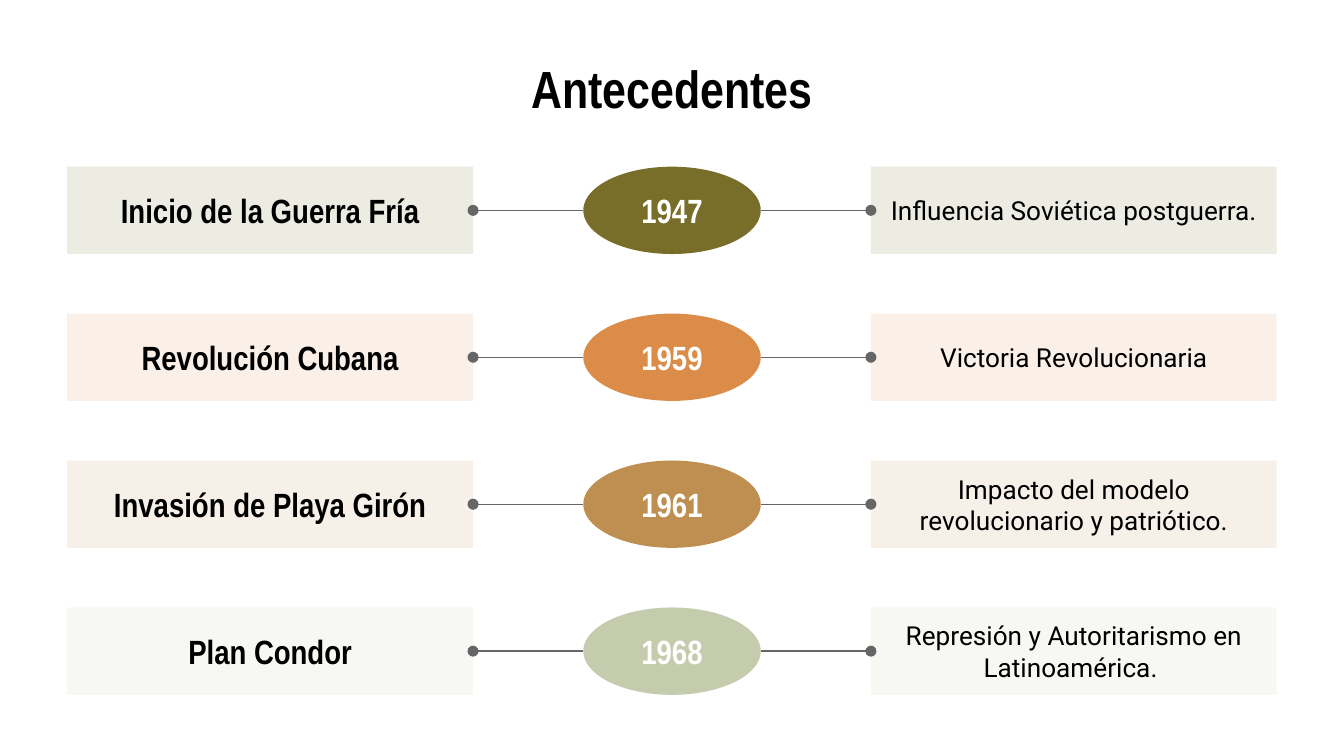
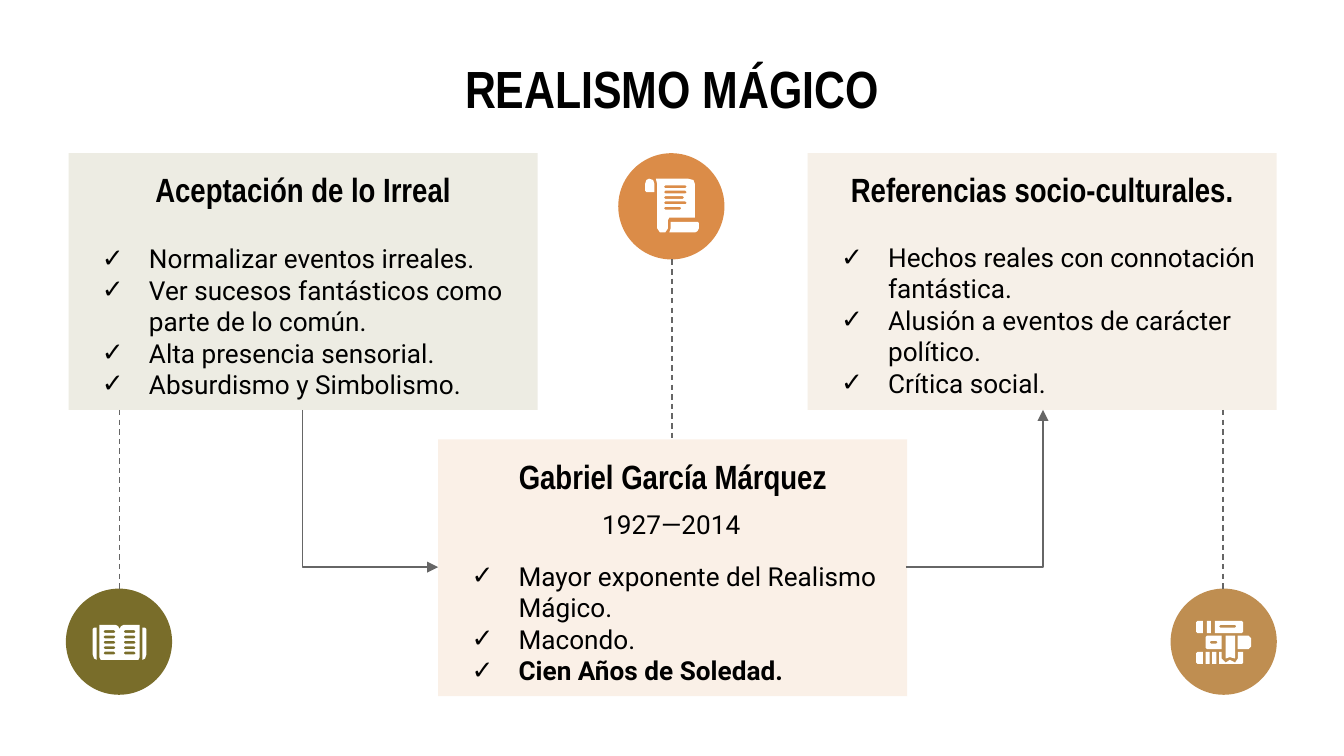
from dataclasses import dataclass

from lxml.etree import SubElement
from pptx import Presentation
from pptx.dml.color import RGBColor as RGB
from pptx.enum.dml import MSO_LINE_DASH_STYLE as DASH
from pptx.enum.shapes import MSO_CONNECTOR as LINK, MSO_SHAPE as SHAPE
from pptx.enum.text import MSO_ANCHOR as ANCHOR, PP_ALIGN as ALIGN
from pptx.oxml.ns import qn
from pptx.util import Inches, Pt


@dataclass(frozen=True)
class Theme:
    """Colours, fonts and type sizes shared by the slides."""
    olive: str = "796D2A"
    orange: str = "DB8C48"
    ochre: str = "BF8E51"
    sage: str = "C4CCAD"
    ink: str = "000000"
    paper: str = "FFFFFF"
    rule: str = "666666"
    heading_font: str = "Arial Narrow"
    body_font: str = "Roboto"
    title_size: int = 28
    heading_size: int = 18
    body_size: int = 14
    rule_width: float = 0.75
    tint: int = 13


THEME = Theme()


def inches(*lengths):
    """Convert several lengths at once."""
    return [Inches(length) for length in lengths]


def write(shape, lines, size, heading=False, color=THEME.ink, align=ALIGN.CENTER):
    """Fill a shape with styled paragraphs and return them."""
    frame = shape.text_frame
    frame.word_wrap = True
    frame.vertical_anchor = ANCHOR.MIDDLE
    frame.margin_left = frame.margin_right = Inches(0.1)
    frame.margin_top = frame.margin_bottom = Inches(0.1)
    frame.text = "\n".join(lines)
    for paragraph in frame.paragraphs:
        paragraph.alignment = align
        font = paragraph.font
        font.name = THEME.heading_font if heading else THEME.body_font
        font.size = Pt(size)
        font.bold = heading
        font.color.rgb = RGB.from_string(color)
    return frame.paragraphs


def add_label(slide, text, box, size, heading=False):
    """Add a centred one-line text box."""
    write(slide.shapes.add_textbox(*inches(*box)), [text], size, heading)


def add_title(slide, text):
    """Add the slide title."""
    add_label(slide, text, (0.5, 0.45, 9, 0.41), THEME.title_size, True)


def paint(shape, color, opacity=100):
    """Give a shape a flat, optionally translucent fill and no outline."""
    shape.shadow.inherit = False
    shape.line.fill.background()
    shape.fill.solid()
    shape.fill.fore_color.rgb = RGB.from_string(color)
    if opacity < 100:
        tone = shape.element.spPr.find(qn("a:solidFill"))[0]
        SubElement(tone, qn("a:alpha"), val=str(opacity * 1000))


def add_panel(slide, box, color):
    """Add a tinted rectangle."""
    panel = slide.shapes.add_shape(SHAPE.RECTANGLE, *inches(*box))
    paint(panel, color, THEME.tint)
    return panel


def add_oval(slide, box, color):
    """Add a solid ellipse."""
    oval = slide.shapes.add_shape(SHAPE.OVAL, *inches(*box))
    paint(oval, color)
    return oval


def add_rule(slide, start, end, kind=LINK.STRAIGHT, head=None, tail=None, dashed=False):
    """Add a thin grey connector with optional end marks."""
    rule = slide.shapes.add_connector(kind, *inches(*start, *end))
    rule.line.color.rgb = RGB.from_string(THEME.rule)
    rule.line.width = Pt(THEME.rule_width)
    if dashed:
        rule.line.dash_style = DASH.DASH
    properties = rule.element.spPr
    for tag, mark in (("a:headEnd", head), ("a:tailEnd", tail)):
        if mark:
            SubElement(properties.find(qn("a:ln")), qn(tag), type=mark)
    SubElement(properties, qn("a:effectLst"))
    return rule


def add_corner_arrow(slide, start, end, vertical_first=False):
    """Add an arrow with a single right-angle bend."""
    if vertical_first:
        mid_x, mid_y = (start[0] + end[0]) / 2, (start[1] + end[1]) / 2
        half_run, half_drop = (end[0] - start[0]) / 2, (end[1] - start[1]) / 2
        start = mid_x + half_drop, mid_y - half_run
        end = mid_x - half_drop, mid_y + half_run
    arrow = add_rule(slide, start, end, LINK.ELBOW, tail="triangle")
    properties = arrow.element.spPr
    properties.find(qn("a:prstGeom")).set("prst", "bentConnector2")
    if vertical_first:
        properties.find(qn("a:xfrm")).set("rot", str(270 * 60000))


def add_checklist(slide, items, box):
    """Add a check-marked list and return its paragraphs."""
    checklist = slide.shapes.add_textbox(*inches(*box))
    paragraphs = write(checklist, items, THEME.body_size, align=ALIGN.LEFT)
    for paragraph in paragraphs:
        properties = paragraph._p.get_or_add_pPr()
        properties.set("marL", str(Inches(0.5)))
        properties.set("indent", str(Inches(-0.35)))
        bullet_color = SubElement(properties, qn("a:buClr"))
        SubElement(bullet_color, qn("a:srgbClr"), val=THEME.ink)
        SubElement(properties, qn("a:buFont"), typeface=THEME.body_font)
        SubElement(properties, qn("a:buChar"), char="✓")
        properties.append(properties.find(qn("a:defRPr")))
    return paragraphs


def plate(left, top, right, bottom, left_cut=0.0, right_cut=0.0):
    """Outline a box whose left and right corners may be bevelled."""
    return [(left + left_cut, top), (right - right_cut, top),
            (right, top + right_cut), (right, bottom - right_cut),
            (right - right_cut, bottom), (left + left_cut, bottom),
            (left, bottom - left_cut), (left, top + left_cut)]


def text_bar(left, top, right):
    """Outline a small line of writing inside an icon."""
    return plate(left, top, right, top + 0.02, 0.01, 0.01)


def add_glyph(slide, *contours):
    """Add a white outline; inner contours are cut out."""
    first, *cutouts = [[inches(*point) for point in contour] for contour in contours]
    pen = slide.shapes.build_freeform(*first[0])
    pen.add_line_segments(first[1:], close=True)
    for cutout in cutouts:
        pen.move_to(*cutout[0])
        pen.add_line_segments(cutout[1:], close=True)
    paint(pen.convert_to_shape(), THEME.paper)


def draw_scroll(slide):
    """Draw the scroll icon."""
    add_glyph(slide, [(4.83, 1.33), (4.81, 1.34), (4.8, 1.37), (4.8, 1.42),
                      (4.81, 1.43), (4.87, 1.43), (4.87, 1.37), (4.86, 1.34)])
    add_glyph(slide, [(4.99, 1.65), (4.99, 1.7), (4.98, 1.73), (5.17, 1.73),
                      (5.19, 1.72), (5.2, 1.7), (5.2, 1.66), (5.19, 1.65)])
    sheet = [(4.88, 1.33), (4.89, 1.37), (4.89, 1.7), (4.91, 1.73), (4.95, 1.73),
             (4.97, 1.7), (4.97, 1.64), (4.98, 1.62), (5.17, 1.62), (5.17, 1.37),
             (5.16, 1.34), (5.12, 1.33)]
    ends = (5.11, 5.11, 5.09, 5.11, 5.07)
    add_glyph(slide, sheet, *[text_bar(4.94, 1.38 + 0.04 * row, end)
                              for row, end in enumerate(ends)])


def draw_open_book(slide):
    """Draw the open book icon."""
    add_glyph(slide, [(0.7, 4.67), (0.69, 4.68), (0.69, 4.87), (0.7, 4.9),
                      (0.72, 4.91), (0.72, 4.67)])
    add_glyph(slide, [(1.06, 4.67), (1.06, 4.91), (1.08, 4.9), (1.09, 4.87),
                      (1.09, 4.68), (1.08, 4.67)])
    pages = [(0.74, 4.65), (0.74, 4.89), (0.75, 4.91), (1.03, 4.91), (1.04, 4.89),
             (1.04, 4.65), (0.92, 4.65), (0.9, 4.66), (0.89, 4.68), (0.88, 4.66),
             (0.86, 4.65)]
    add_glyph(slide, pages, *[text_bar(left, 4.69 + 0.04 * row, left + 0.09)
                              for left in (0.77, 0.92) for row in range(5)])


def draw_book_stack(slide):
    """Draw the stack of books icon."""
    for top in (4.62, 4.85):
        add_glyph(slide, plate(8.9, top, 8.95, top + 0.09, left_cut=0.01))
    for left, top, right in ((8.98, 4.62, 9.01), (8.97, 4.85, 9), (9.02, 4.85, 9.05)):
        add_glyph(slide, plate(left, top, right, top + 0.09))
    add_glyph(slide, plate(9.04, 4.62, 9.25, 4.71, right_cut=0.01),
              text_bar(9.07, 4.65, 9.2))
    add_glyph(slide, plate(9.21, 4.73, 9.31, 4.83, right_cut=0.02))
    add_glyph(slide, plate(8.97, 4.73, 9.09, 4.83, left_cut=0.01),
              text_bar(9, 4.77, 9.06))
    add_glyph(slide, [(9.12, 4.73), (9.12, 4.9), (9.15, 4.89), (9.19, 4.9), (9.19, 4.73)])
    add_glyph(slide, [(9.07, 4.85), (9.07, 4.94), (9.24, 4.94), (9.25, 4.93),
                      (9.25, 4.85), (9.21, 4.85), (9.21, 4.9), (9.19, 4.93),
                      (9.15, 4.91), (9.12, 4.93), (9.09, 4.9), (9.09, 4.85)])


def add_event(slide, top, color, event, year, effect):
    """Add one timeline row: event, year and effect."""
    height = 0.65
    middle = top + height / 2
    write(add_panel(slide, (0.5, top, 3.02, height), color), [event],
          THEME.heading_size, True)
    write(add_panel(slide, (6.48, top, 3.02, height), color), [effect], THEME.body_size)
    write(add_oval(slide, (4.34, top, 1.32, height), color), [year],
          THEME.heading_size, True, THEME.paper)
    add_rule(slide, (3.52, middle), (4.34, middle), head="oval")
    add_rule(slide, (5.66, middle), (6.48, middle), tail="oval")


def add_card(slide, left, top, color, heading, items, list_top):
    """Add a panel with a heading and a checklist reaching its foot."""
    width, height = 3.49, 1.91
    add_panel(slide, (left, top, width, height), color)
    add_label(slide, heading, (left, top + 0.09, width, 0.36), THEME.heading_size, True)
    return add_checklist(slide, items, (left, list_top, width, top + height - list_top))


def build_background(slide):
    """Build the timeline of historical events."""
    add_title(slide, "Antecedentes")
    events = [
        (THEME.olive, "Inicio de la Guerra Fría", "1947",
         "Influencia Soviética postguerra."),
        (THEME.orange, "Revolución Cubana", "1959", "Victoria Revolucionaria"),
        (THEME.ochre, "Invasión de Playa Girón", "1961",
         "Impacto del modelo revolucionario y patriótico."),
        (THEME.sage, "Plan Condor", "1968",
         "Represión y Autoritarismo en Latinoamérica. "),
    ]
    first_top, last_top = 1.24, 4.52
    pitch = (last_top - first_top) / (len(events) - 1)
    for row, event in enumerate(events):
        add_event(slide, first_top + row * pitch, *event)


def build_magic_realism(slide):
    """Build the diagram of magic realism and its author."""
    add_title(slide, "REALISMO MÁGICO")
    add_card(slide, 0.51, 1.14, THEME.olive, "Aceptación de lo Irreal",
             ["Normalizar eventos irreales.",
              "Ver sucesos fantásticos como parte de lo común.",
              "Alta presencia sensorial.", "Absurdismo y Simbolismo."], 1.73)
    add_card(slide, 6.01, 1.14, THEME.ochre, "Referencias socio-culturales.",
             ["Hechos reales con connotación fantástica.",
              "Alusión a eventos de carácter político.", "Crítica social."], 1.71)
    works = add_card(slide, 3.26, 3.27, THEME.orange, "Gabriel García Márquez",
                     ["Mayor exponente del Realismo Mágico.", "Macondo.",
                      "Cien Años de Soledad."], 4.09)
    works[-1].font.bold = True
    add_label(slide, "1927—2014", (3.25, 3.72, 3.49, 0.36), THEME.body_size)
    add_corner_arrow(slide, (2.25, 3.05), (3.26, 4.22), vertical_first=True)
    add_corner_arrow(slide, (6.74, 4.22), (7.76, 3.05))
    for left, top, color, draw_icon in ((4.6, 1.14, THEME.orange, draw_scroll),
                                        (8.71, 4.38, THEME.ochre, draw_book_stack),
                                        (0.49, 4.38, THEME.olive, draw_open_book)):
        add_oval(slide, (left, top, 0.79, 0.79), color)
        draw_icon(slide)
    for x, top, bottom in ((5, 1.93, 3.27), (0.89, 3.05, 4.38), (9.1, 3.05, 4.38)):
        add_rule(slide, (x, top), (x, bottom), dashed=True)


def main():
    """Build and save the presentation."""
    deck = Presentation()
    deck.slide_width = Inches(10)
    deck.slide_height = Inches(10 * 9 / 16)
    blank = deck.slide_layouts[6]
    for build in (build_background, build_magic_realism):
        build(deck.slides.add_slide(blank))
    deck.save("out.pptx")


if __name__ == "__main__":
    main()
